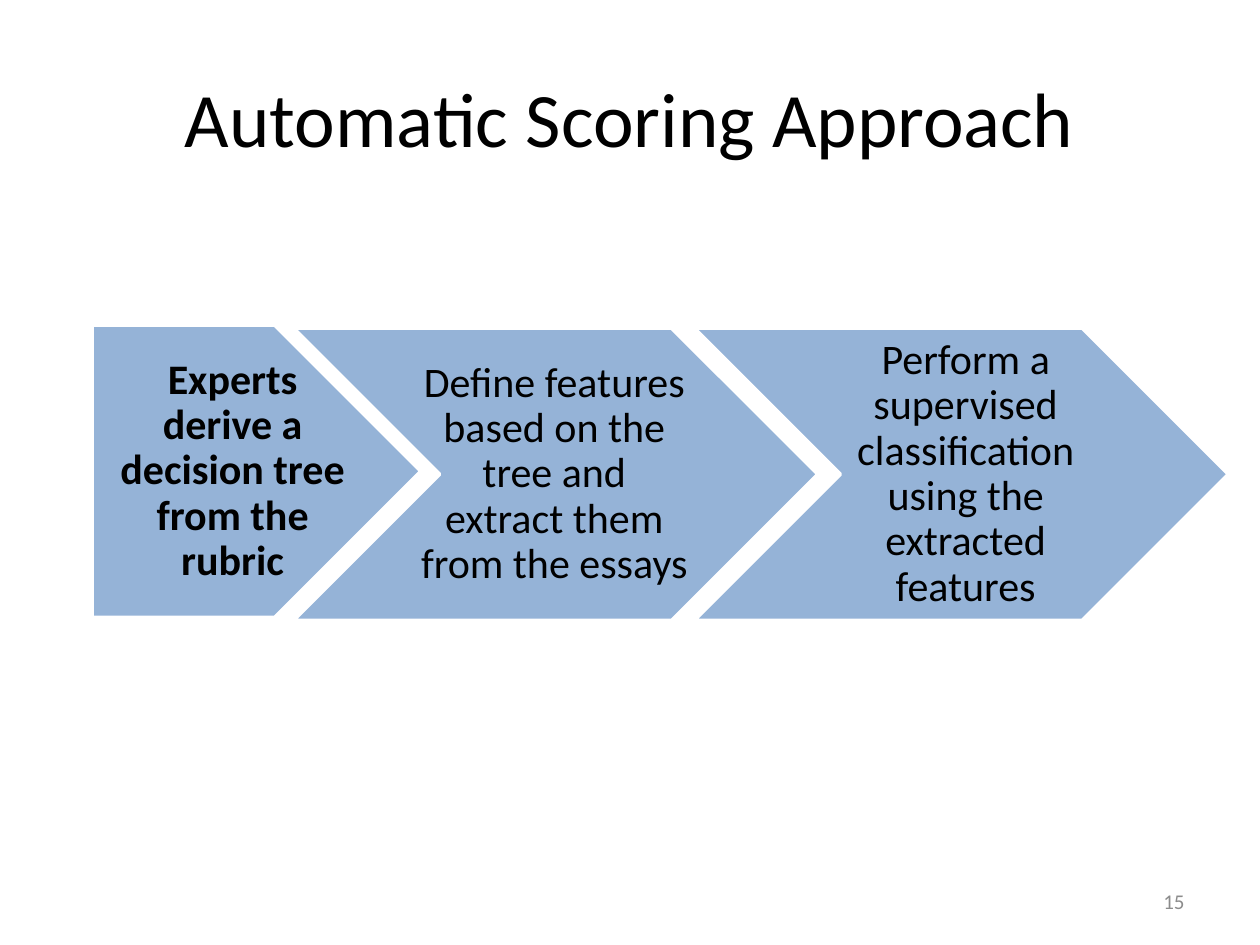
"""Build the slide showing the three steps of the automatic scoring approach."""
from dataclasses import dataclass

from pptx import Presentation
from pptx.dml.color import RGBColor
from pptx.enum import shapes, text
from pptx.slide import Slide
from pptx.util import Pt


@dataclass(frozen=True)
class Theme:
    font: str = "Calibri"
    ink: RGBColor = RGBColor(0x00, 0x00, 0x00)
    muted: RGBColor = RGBColor(0x8C, 0x8C, 0x8C)
    arrow: RGBColor = RGBColor(0x95, 0xB3, 0xD7)
    outline: RGBColor = RGBColor(0xFF, 0xFF, 0xFF)
    title_size: float = 44
    step_size: float = 24
    number_size: float = 12


@dataclass(frozen=True)
class Box:
    left: float
    top: float
    width: float
    height: float

    def lengths(self) -> tuple[Pt, Pt, Pt, Pt]:
        return Pt(self.left), Pt(self.top), Pt(self.width), Pt(self.height)


@dataclass(frozen=True)
class Label:
    wording: str
    box: Box
    size: float
    color: RGBColor
    align: text.PP_ALIGN = text.PP_ALIGN.CENTER
    bold: bool = False
    line_spacing: float = 1.0
    insets: tuple[float, float, float, float] = (7.2, 3.6, 7.2, 3.6)


@dataclass(frozen=True)
class Step:
    wording: str
    outline: shapes.MSO_SHAPE
    left: float
    top: float
    width: float
    label_left: float
    label_width: float
    left_inset: float = 8.5
    bold: bool = False


THEME = Theme()
STEP_HEIGHT = 167
STEPS = (
    Step("Experts derive a decision tree from the rubric",
         shapes.MSO_SHAPE.PENTAGON, 52.6, 185.8, 187.9, 52.6, 151.9, 11.5, True),
    Step("Define features based on the tree and extract them from the essays",
         shapes.MSO_SHAPE.CHEVRON, 167.8, 187.5, 299.5, 231.8, 164.2),
    Step("Perform a supervised classification using the extracted features",
         shapes.MSO_SHAPE.CHEVRON, 396.7, 187.5, 305.3, 468.7, 160.6),
)


def draw_label(slide: Slide, label: Label) -> None:
    """Write one paragraph centred vertically in its box."""
    frame = slide.shapes.add_textbox(*label.box.lengths()).text_frame
    frame.word_wrap = True
    frame.vertical_anchor = text.MSO_ANCHOR.MIDDLE
    (frame.margin_left, frame.margin_top,
     frame.margin_right, frame.margin_bottom) = map(Pt, label.insets)
    frame.text = label.wording
    paragraph = frame.paragraphs[0]
    paragraph.alignment = label.align
    paragraph.line_spacing = label.line_spacing
    font = paragraph.runs[0].font
    font.name = THEME.font
    font.size = Pt(label.size)
    font.bold = label.bold
    font.color.rgb = label.color


def draw_step(slide: Slide, step: Step) -> None:
    """Draw one process arrow and its wording."""
    box = Box(step.left, step.top, step.width, STEP_HEIGHT)
    arrow = slide.shapes.add_shape(step.outline, *box.lengths())
    arrow.shadow.inherit = False
    arrow.fill.solid()
    arrow.fill.fore_color.rgb = THEME.arrow
    arrow.line.color.rgb = THEME.outline
    arrow.line.width = Pt(2)
    draw_label(slide, Label(
        step.wording, Box(step.label_left, step.top, step.label_width, STEP_HEIGHT),
        THEME.step_size, THEME.ink, bold=step.bold, line_spacing=0.9,
        insets=(step.left_inset, 5.8, 2.8, 5.8)))


def main() -> None:
    """Assemble and save the slide."""
    deck = Presentation()
    deck.slide_width, deck.slide_height = Pt(720), Pt(540)
    slide = deck.slides.add_slide(deck.slide_layouts[6])
    draw_label(slide, Label("Automatic Scoring Approach", Box(36, 21.6, 648, 90),
                            THEME.title_size, THEME.ink))
    for step in STEPS:
        draw_step(slide, step)
    draw_label(slide, Label("15", Box(516, 500.5, 168, 28.8), THEME.number_size,
                            THEME.muted, text.PP_ALIGN.RIGHT))
    deck.save("out.pptx")


if __name__ == "__main__":
    main()
